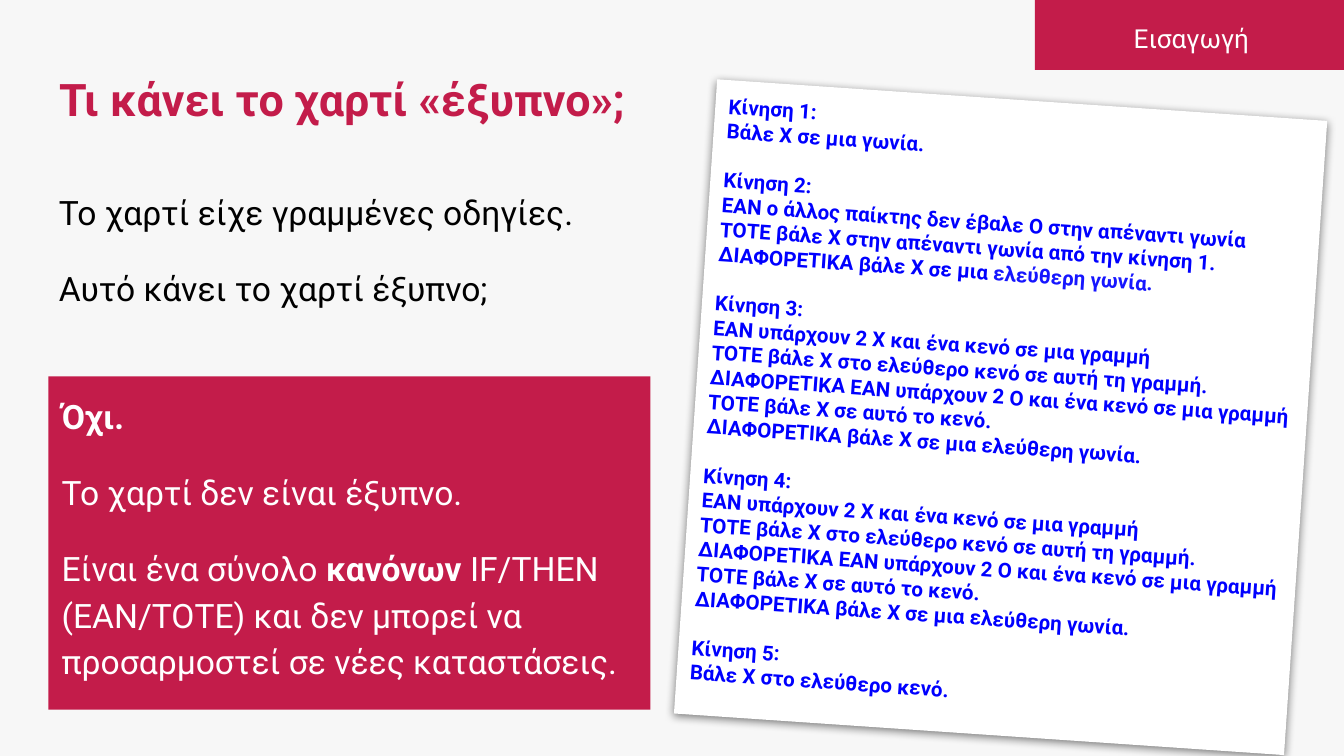
from dataclasses import dataclass

from lxml.etree import SubElement
from pptx import Presentation
from pptx.dml.color import RGBColor
from pptx.enum.shapes import MSO_SHAPE
from pptx.enum.text import MSO_ANCHOR, MSO_AUTO_SIZE, PP_ALIGN
from pptx.oxml.ns import qn
from pptx.util import Inches, Pt


@dataclass(frozen=True)
class Theme:
    font: str = "Roboto"
    background: str = "F7F7F7"
    accent: str = "C31C4A"
    white: str = "FFFFFF"
    black: str = "000000"
    rule: str = "0000FF"
    rule_light: str = "1616FF"
    title_size: float = 24
    body_size: float = 18
    tag_size: float = 14
    rule_size: float = 11
    body_spacing: float = 1.15
    body_gap: float = 16
    rule_gap: float = 13.2


class SlideBuilder:
    def __init__(self, prs, theme):
        self.theme = theme
        self.s = prs.slides.add_slide(prs.slide_layouts[5])
        fill = self.s.background.fill
        fill.solid()
        fill.fore_color.rgb = RGBColor.from_string(theme.background)

    def frame(self, sp, anchor=MSO_ANCHOR.TOP):
        tf = sp.text_frame
        tf.word_wrap = True
        tf.auto_size = MSO_AUTO_SIZE.NONE
        tf.vertical_anchor = anchor
        tf.margin_left = tf.margin_right = Inches(0.1)
        tf.margin_top = tf.margin_bottom = Inches(0.1)
        return tf

    def paragraph(self, tf, runs, size, color, before=0, spacing=1.0, align=PP_ALIGN.LEFT):
        p = tf.paragraphs[0]
        if p.runs:
            p = tf.add_paragraph()
        p.alignment = align
        p.line_spacing = spacing
        p.space_before = Pt(before)
        for text, bold, *own_color in runs:
            r = p.add_run()
            r.text = text
            r.font.name = self.theme.font
            r.font.size = Pt(size)
            r.font.bold = bold
            r.font.color.rgb = RGBColor.from_string(own_color[0] if own_color else color)

    def title(self, text, *box):
        sp = self.s.shapes.title
        sp.left, sp.top, sp.width, sp.height = map(Inches, box)
        tf = self.frame(sp, MSO_ANCHOR.MIDDLE)
        self.paragraph(tf, [(text, True)], self.theme.title_size, self.theme.accent)

    def rect(self, color, *box):
        sp = self.s.shapes.add_shape(MSO_SHAPE.RECTANGLE, *map(Inches, box))
        sp.shadow.inherit = False
        sp.fill.solid()
        sp.fill.fore_color.rgb = RGBColor.from_string(color)
        sp.line.fill.background()
        return sp

    def text_box(self, *box):
        return self.s.shapes.add_textbox(*map(Inches, box))

    def body(self, sp, paragraphs, color):
        t = self.theme
        tf = self.frame(sp)
        for i, runs in enumerate(paragraphs):
            self.paragraph(tf, runs, t.body_size, color, t.body_gap if i else 0, t.body_spacing)

    def tag(self, text, *box):
        t = self.theme
        tf = self.frame(self.text_box(*box))
        self.paragraph(tf, [(text, False)], t.tag_size, t.white,
                       spacing=t.body_spacing, align=PP_ALIGN.CENTER)

    def paper(self, moves, rotation, *box):
        t = self.theme
        sp = self.rect(t.white, *box)
        sp.rotation = rotation
        self.drop_shadow(sp)
        tf = self.frame(sp)
        for number, lines in enumerate(moves, 1):
            gap = t.rule_gap if number > 1 else 0
            self.paragraph(tf, [(f"Κίνηση {number}:", True)], t.rule_size, t.rule, gap)
            for runs in lines:
                self.paragraph(tf, runs, t.rule_size, t.rule)

    def drop_shadow(self, sp):
        effects = sp._element.spPr.find(qn("a:effectLst"))
        shadow = SubElement(effects, qn("a:outerShdw"), blurRad=str(Pt(4.5)),
                            dist=str(Pt(1.5)), dir="5400000", algn="bl", rotWithShape="0")
        color = SubElement(shadow, qn("a:srgbClr"), val=self.theme.black)
        SubElement(color, qn("a:alpha"), val="49000")


def bold_lines(*lines):
    return [[(line, True)] for line in lines]


def main():
    prs = Presentation()
    prs.slide_width, prs.slide_height = Inches(10), Inches(10 * 9 / 16)
    theme = Theme()
    slide = SlideBuilder(prs, theme)

    fill_gap = bold_lines(
        "ΕΑΝ υπάρχουν 2 Χ και ένα κενό σε μια γραμμή",
        "ΤΟΤΕ βάλε Χ στο ελεύθερο κενό σε αυτή τη γραμμή.",
        "ΔΙΑΦΟΡΕΤΙΚΑ ΕΑΝ υπάρχουν 2 Ο και ένα κενό σε μια γραμμή",
        "ΤΟΤΕ βάλε Χ σε αυτό το κενό.",
        "ΔΙΑΦΟΡΕΤΙΚΑ βάλε Χ σε μια ελεύθερη γωνία.",
    )
    opposite_corner = bold_lines(
        "ΕΑΝ ο άλλος παίκτης δεν έβαλε Ο στην απέναντι γωνία",
        "ΤΟΤΕ βάλε Χ στην απέναντι γωνία από την κίνηση 1.",
    ) + [[("ΔΙΑΦΟΡΕΤΙΚΑ βάλε Χ σε μια", True), (" ελεύθερη γωνία.", True, theme.rule_light)]]
    moves = [
        bold_lines("Βάλε Χ σε μια γωνία."),
        opposite_corner,
        fill_gap,
        fill_gap,
        bold_lines("Βάλε Χ στο ελεύθερο κενό."),
    ]

    slide.rect(theme.accent, 7.7, 0, 2.3, 0.52)
    slide.paper(moves, 3.9, 5.17, 0.74, 4.55, 4.73)
    slide.body(slide.text_box(0.34, 1.28, 4.48, 4), [
        [("Το χαρτί είχε γραμμένες οδηγίες.", False)],
        [("Αυτό κάνει το χαρτί έξυπνο;", False)],
    ], theme.black)
    slide.title("Τι κάνει το χαρτί «έξυπνο»;", 0.34, 0.35, 9.32, 0.76)
    slide.body(slide.rect(theme.accent, 0.36, 2.8, 4.48, 2.48), [
        [("Όχι.", True)],
        [("Το χαρτί δεν είναι έξυπνο.", False)],
        [("Είναι ένα σύνολο ", False), ("κανόνων ", True),
         ("IF/THEN (ΕΑΝ/ΤΟΤΕ) και δεν μπορεί να προσαρμοστεί σε νέες καταστάσεις.", False)],
    ], theme.white)
    slide.tag("Εισαγωγή", 7.88, 0.03, 1.97, 0.42)
    prs.save("out.pptx")


if __name__ == "__main__":
    main()
